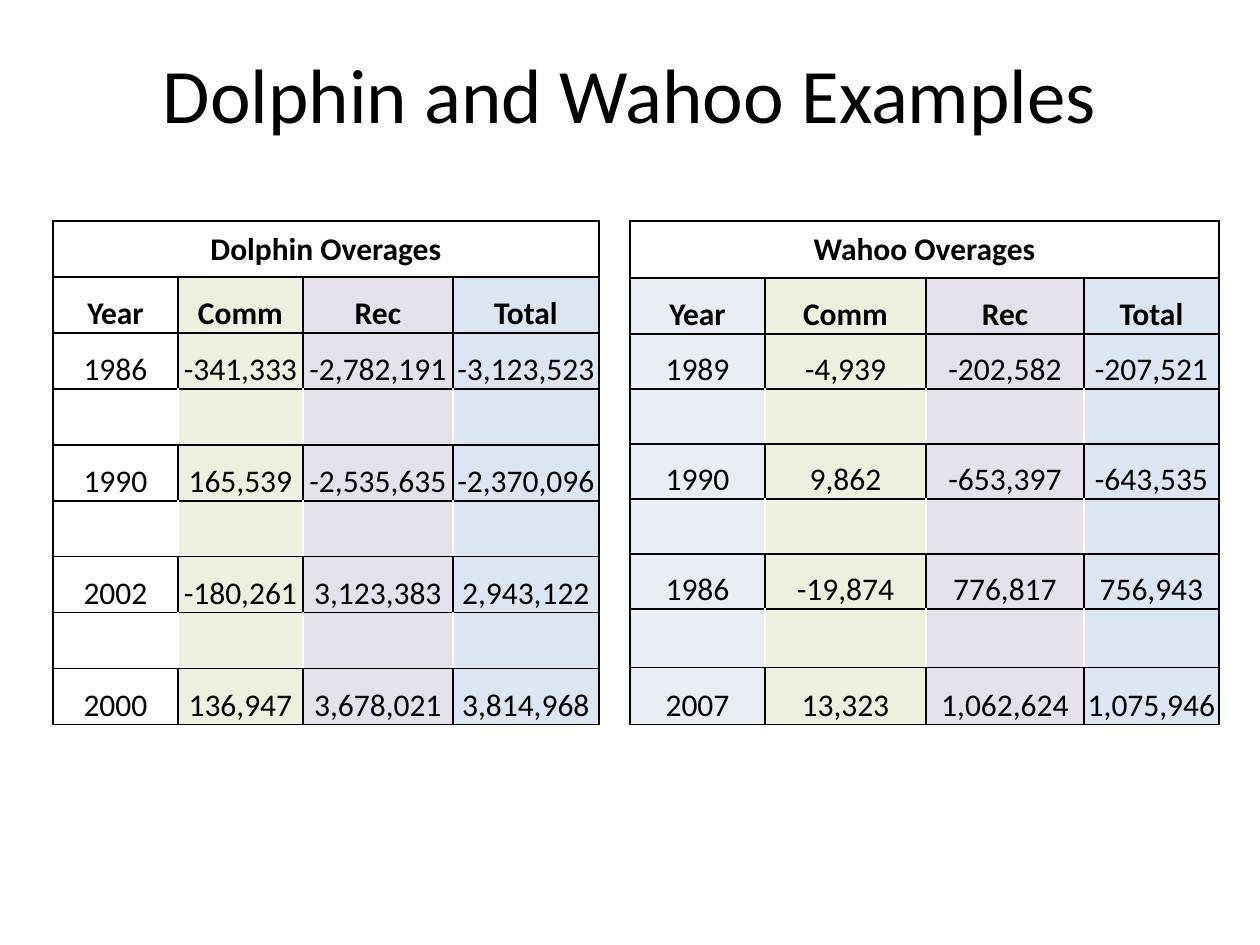
from lxml import etree
from pptx import Presentation
from pptx.dml.color import RGBColor
from pptx.enum.text import MSO_ANCHOR, PP_ALIGN
from pptx.oxml.ns import qn
from pptx.util import Pt

MIDDLE, BOTTOM = MSO_ANCHOR.MIDDLE, MSO_ANCHOR.BOTTOM
CENTER = PP_ALIGN.CENTER

BLACK = RGBColor(0x00, 0x00, 0x00)
WHITE = RGBColor(0xFF, 0xFF, 0xFF)
PALE_GRAY = RGBColor(0xE9, 0xED, 0xF4)
PALE_GREEN = RGBColor(0xEB, 0xF1, 0xDE)
PALE_PURPLE = RGBColor(0xE6, 0xE0, 0xEC)
PALE_BLUE = RGBColor(0xDC, 0xE6, 0xF2)

PX = 914400 / 126
SLIDE_SIZE = (1260, 945)
TITLE = "Dolphin and Wahoo Examples"
TITLE_BOX = (63, 38, 1134, 110)
TABLE_TOP = 221
CELL_MARGINS = {"margin_left": 1, "margin_right": 1, "margin_top": 1, "margin_bottom": 0}
HEADINGS = ("Year", "Comm", "Rec", "Total")
VALUE_FILLS = (PALE_GREEN, PALE_PURPLE, PALE_BLUE)

OVERAGES = [
    {
        "heading": "Dolphin Overages",
        "left": 53,
        "widths": (125, 125, 150, 146),
        "heights": (56,) * 9,
        "year_fill": None,
        "years": [
            ("1986", "-341,333", "-2,782,191", "-3,123,523"),
            ("1990", "165,539", "-2,535,635", "-2,370,096"),
            ("2002", "-180,261", "3,123,383", "2,943,122"),
            ("2000", "136,947", "3,678,021", "3,814,968"),
        ],
    },
    {
        "heading": "Wahoo Overages",
        "left": 630,
        "widths": (135, 161, 158, 135),
        "heights": (57, 56, 55, 55, 55, 55, 55, 59, 57),
        "year_fill": PALE_GRAY,
        "years": [
            ("1989", "-4,939", "-202,582", "-207,521"),
            ("1990", "9,862", "-653,397", "-643,535"),
            ("1986", "-19,874", "776,817", "756,943"),
            ("2007", "13,323", "1,062,624", "1,075,946"),
        ],
    },
]


def emu(px):
    return round(px * PX)


def write(frame, text, size, bold=False):
    paragraph = frame.paragraphs[0]
    paragraph.alignment = CENTER
    paragraph.font.size = Pt(size)
    if not text:
        return
    run = paragraph.add_run()
    run.text = text
    font_format = {"name": "Calibri", "size": Pt(size), "bold": bold}
    for key, value in font_format.items():
        setattr(run.font, key, value)
    run.font.color.rgb = BLACK


def set_borders(cell, left, right):
    """Draw 1 pt borders; top and bottom are always black."""
    properties = cell._tc.get_or_add_tcPr()
    edges = {"a:lnL": left, "a:lnR": right, "a:lnT": BLACK, "a:lnB": BLACK}
    for position, (tag, color) in enumerate(edges.items()):
        line = etree.Element(qn(tag), w=str(Pt(1)))
        fill = etree.SubElement(line, qn("a:solidFill"))
        etree.SubElement(fill, qn("a:srgbClr"), val=str(color))
        properties.insert(position, line)


def format_cell(cell, text, fill, bold, anchor):
    for side, px in CELL_MARGINS.items():
        setattr(cell, side, emu(px))
    cell.vertical_anchor = anchor
    if fill is None:
        cell.fill.background()
    else:
        cell.fill.solid()
        cell.fill.fore_color.rgb = fill
    write(cell.text_frame, text, 18, bold)


def add_overages(slide, overages):
    """Add a table whose years are set apart by empty rows."""
    widths, heights = overages["widths"], overages["heights"]
    rows = [(overages["heading"], "", "", ""), HEADINGS]
    for year in overages["years"]:
        rows += [year, ("",) * len(HEADINGS)]
    rows.pop()

    table = slide.shapes.add_table(
        len(rows), len(widths), emu(overages["left"]), emu(TABLE_TOP),
        emu(sum(widths)), emu(sum(heights))).table
    table.first_row = table.horz_banding = False
    for column, width in zip(table.columns, widths):
        column.width = emu(width)
    for row, height in zip(table.rows, heights):
        row.height = emu(height)

    last = len(widths) - 1
    column_fills = (overages["year_fill"], *VALUE_FILLS)
    for r, texts in enumerate(rows):
        inner = BLACK if any(texts) else WHITE
        for c, text in enumerate(texts):
            cell = table.cell(r, c)
            format_cell(cell, text, column_fills[c] if r else None,
                        bold=r < 2, anchor=BOTTOM if r else MIDDLE)
            set_borders(cell, left=inner if c else BLACK,
                        right=inner if c < last else BLACK)
    table.cell(0, 0).merge(table.cell(0, last))


def main():
    deck = Presentation()
    deck.slide_width, deck.slide_height = map(emu, SLIDE_SIZE)
    slide = deck.slides.add_slide(deck.slide_layouts[6])

    title = slide.shapes.add_textbox(*map(emu, TITLE_BOX)).text_frame
    title.word_wrap = True
    title.vertical_anchor = MIDDLE
    write(title, TITLE, 44)

    for overages in OVERAGES:
        add_overages(slide, overages)
    deck.save("out.pptx")


if __name__ == "__main__":
    main()
